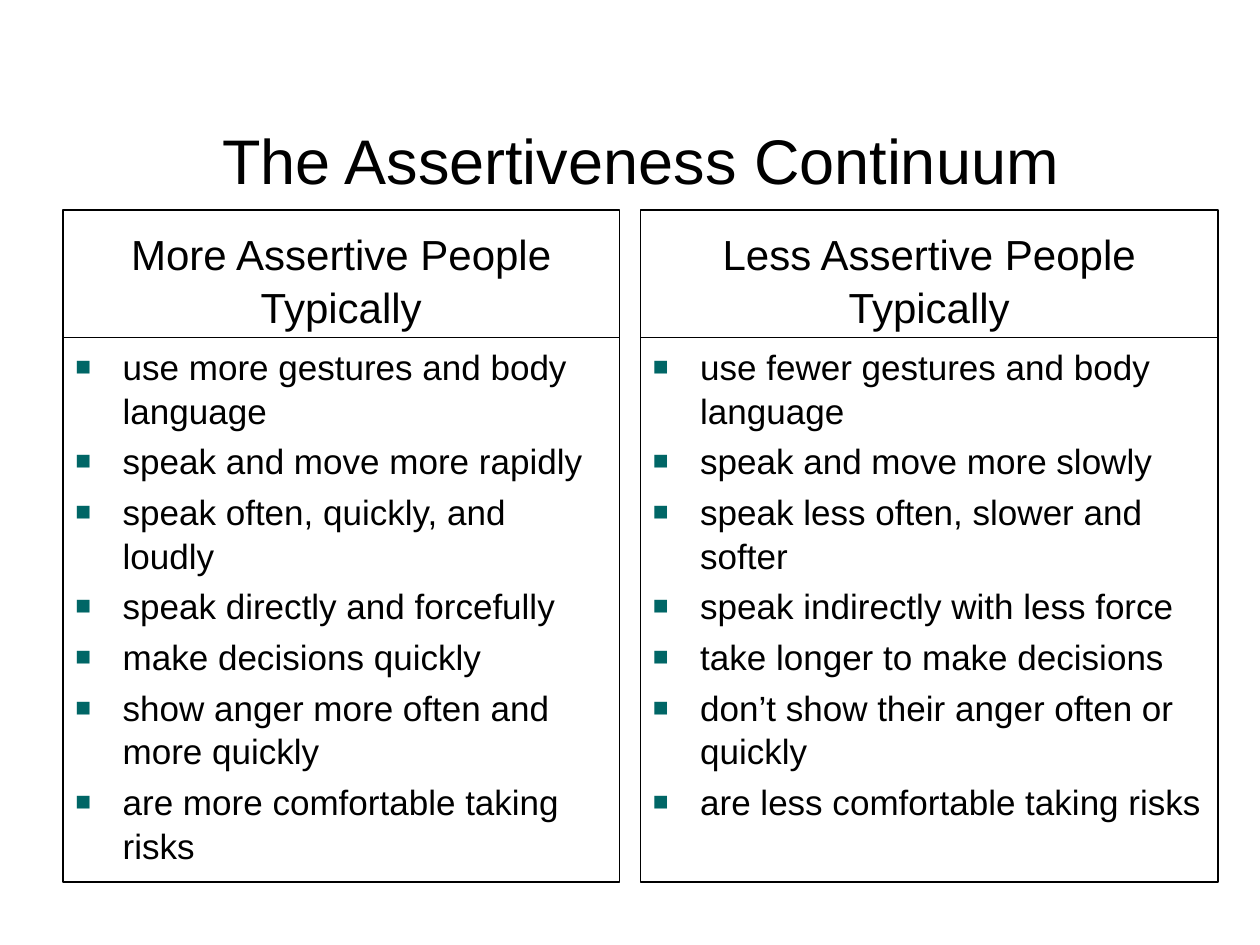
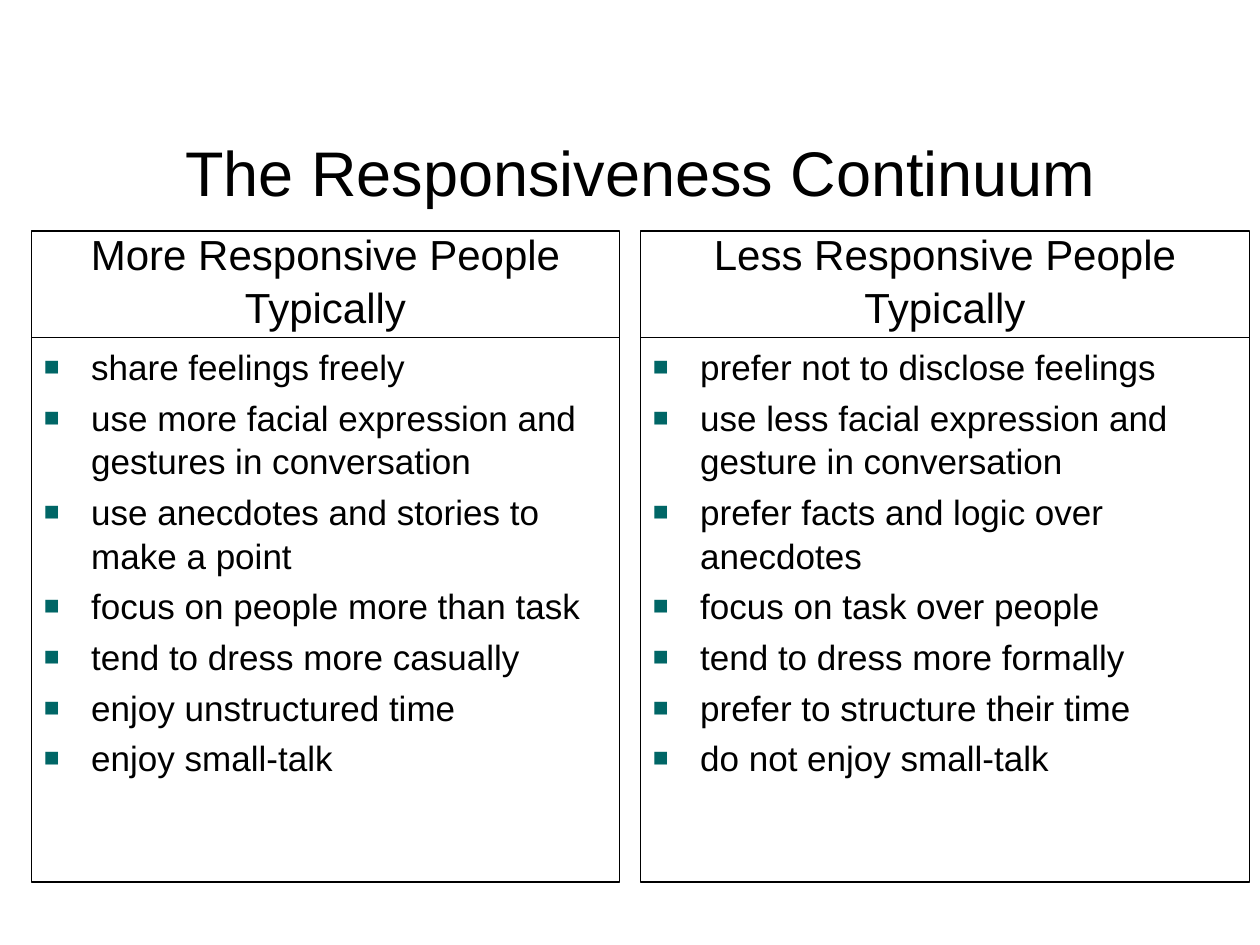
from lxml.etree import SubElement
from pptx import Presentation
from pptx.dml.color import RGBColor as Rgb
from pptx.enum.shapes import MSO_SHAPE as Shape
from pptx.enum.text import MSO_ANCHOR as Anchor, PP_ALIGN as Align
from pptx.oxml.ns import qn
from pptx.util import Pt

COLORS = {"ink": "000000", "bullet": "006666", "page": "FFFFFF"}
FONT = "Arial"
TITLE_ONLY = 5
COLUMN_INNER_EDGES = (354, 366)
LIST_TOP, LIST_BOTTOM = 193, 504
LIST_INDENT = 27

TITLE_FORMAT = {"size": 36, "align": Align.CENTER, "spacing": 1.0}
HEADING_FORMAT = {"size": 24, "align": Align.CENTER, "spacing": 1.04}
LIST_FORMAT = {"size": 20, "align": Align.LEFT, "spacing": 1.04}

CONTINUA = [
    {
        "title": "The Assertiveness Continuum",
        "title_top": 63,
        "heading_top": 120,
        "outer_edges": (36, 696),
        "columns": [
            ("More Assertive People Typically", [
                "use more gestures and body language",
                "speak and move more rapidly",
                "speak often, quickly, and loudly",
                "speak directly and forcefully",
                "make decisions quickly",
                "show anger more often and more quickly",
                "are more comfortable taking risks",
            ]),
            ("Less Assertive People Typically", [
                "use fewer gestures and body language",
                "speak and move more slowly",
                "speak less often, slower and softer",
                "speak indirectly with less force",
                "take longer to make decisions",
                "don’t show their anger often or quickly",
                "are less comfortable taking risks",
            ]),
        ],
    },
    {
        "title": "The Responsiveness Continuum",
        "title_top": 70,
        "heading_top": 132,
        "outer_edges": (18, 714),
        "columns": [
            ("More Responsive People Typically", [
                "share feelings freely",
                "use more facial expression and gestures in conversation",
                "use anecdotes and stories to make a point",
                "focus on people more than task",
                "tend to dress more casually",
                "enjoy unstructured time",
                "enjoy small-talk",
            ]),
            ("Less Responsive People Typically", [
                "prefer not to disclose feelings",
                "use less facial expression and gesture in conversation",
                "prefer facts and logic over anecdotes",
                "focus on task over people",
                "tend to dress more formally",
                "prefer to structure their time",
                "do not enjoy small-talk",
            ]),
        ],
    },
]


def color(name):
    return Rgb.from_string(COLORS[name])


def set_values(target, values):
    for attribute, value in values.items():
        setattr(target, attribute, value)


def format_paragraph(paragraph, style, space_before=0):
    set_values(paragraph, {
        "alignment": style["align"],
        "line_spacing": style["spacing"],
        "space_before": Pt(space_before),
    })
    set_values(paragraph.font, {"name": FONT, "size": Pt(style["size"])})
    paragraph.font.color.rgb = color("ink")


def add_bullet(paragraph):
    properties = paragraph._p.get_or_add_pPr()
    properties.set("marL", str(Pt(LIST_INDENT)))
    properties.set("indent", str(-Pt(LIST_INDENT)))
    bullet_color = SubElement(properties, qn("a:buClr"))
    SubElement(bullet_color, qn("a:srgbClr"), val=COLORS["bullet"])
    SubElement(properties, qn("a:buSzPct"), val="75000")
    SubElement(properties, qn("a:buFont"), typeface=FONT)
    SubElement(properties, qn("a:buChar"), char="■")


def add_title(slide, text, top):
    title = slide.shapes.title
    set_values(title, {
        "left": Pt(42), "top": Pt(top), "width": Pt(648), "height": Pt(62.5),
    })
    frame = title.text_frame
    frame.text = text
    set_values(frame, {
        "word_wrap": True,
        "vertical_anchor": Anchor.MIDDLE,
        "margin_bottom": Pt(10),
    })
    format_paragraph(frame.paragraphs[0], TITLE_FORMAT)


def add_panel(slide, left, top, right, bottom, anchor):
    panel = slide.shapes.add_shape(
        Shape.RECTANGLE, Pt(left), Pt(top), Pt(right - left), Pt(bottom - top))
    panel.shadow.inherit = False
    panel.fill.background()
    panel.line.color.rgb = color("ink")
    panel.line.width = Pt(0.75)
    set_values(panel.text_frame, {"word_wrap": True, "vertical_anchor": anchor})
    return panel.text_frame


def add_column(slide, left, right, heading_top, heading, behaviors):
    heading_frame = add_panel(
        slide, left, heading_top, right, LIST_TOP, Anchor.BOTTOM)
    heading_frame.text = heading
    format_paragraph(heading_frame.paragraphs[0], HEADING_FORMAT)

    list_frame = add_panel(
        slide, left, LIST_TOP, right, LIST_BOTTOM, Anchor.TOP)
    list_frame.text = "\n".join(behaviors)
    for index, behavior in enumerate(list_frame.paragraphs):
        add_bullet(behavior)
        format_paragraph(behavior, LIST_FORMAT, 4 if index else 0)


def add_continuum(deck, continuum):
    slide = deck.slides.add_slide(deck.slide_layouts[TITLE_ONLY])
    slide.background.fill.solid()
    slide.background.fill.fore_color.rgb = color("page")
    add_title(slide, continuum["title"], continuum["title_top"])
    outer_left, outer_right = continuum["outer_edges"]
    inner_left, inner_right = COLUMN_INNER_EDGES
    spans = [(outer_left, inner_left), (inner_right, outer_right)]
    for (left, right), (heading, behaviors) in zip(spans, continuum["columns"]):
        add_column(
            slide, left, right, continuum["heading_top"], heading, behaviors)


def main():
    deck = Presentation()
    set_values(deck, {"slide_width": Pt(720), "slide_height": Pt(540)})
    for continuum in CONTINUA:
        add_continuum(deck, continuum)
    deck.save("out.pptx")


if __name__ == "__main__":
    main()
